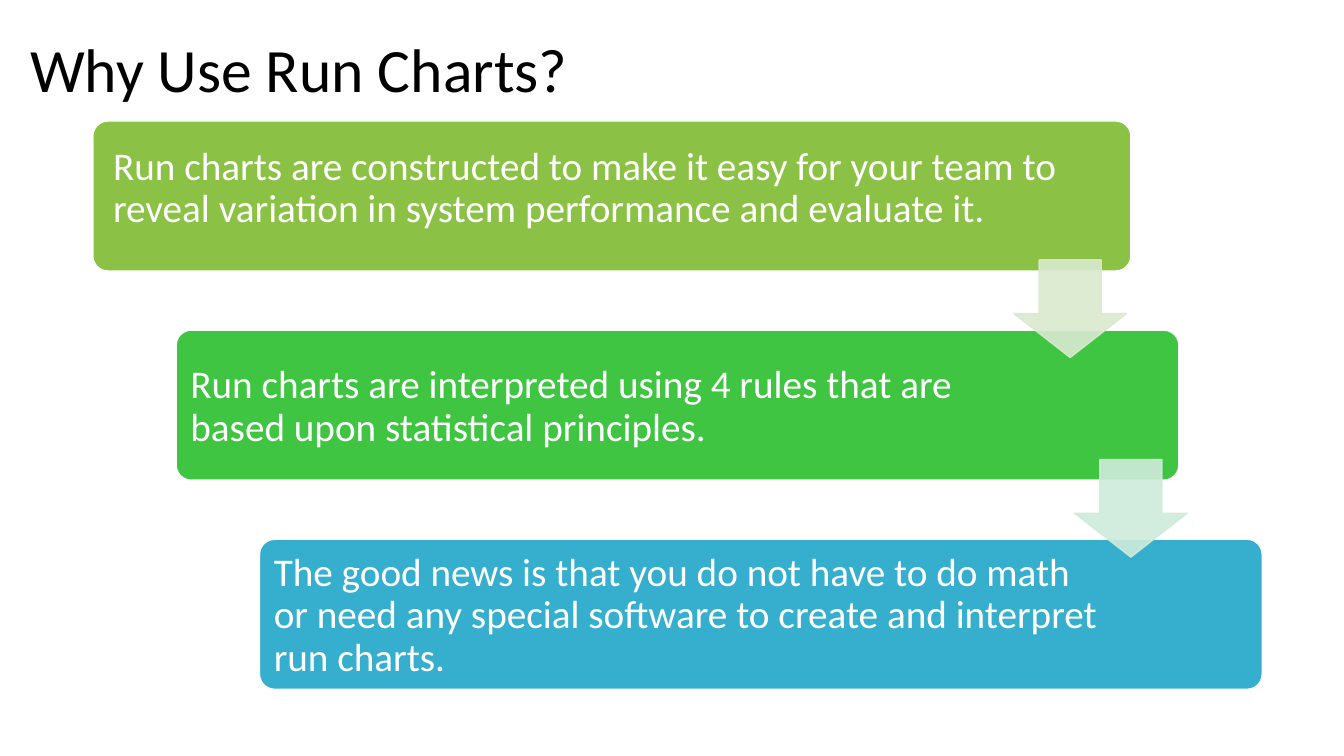
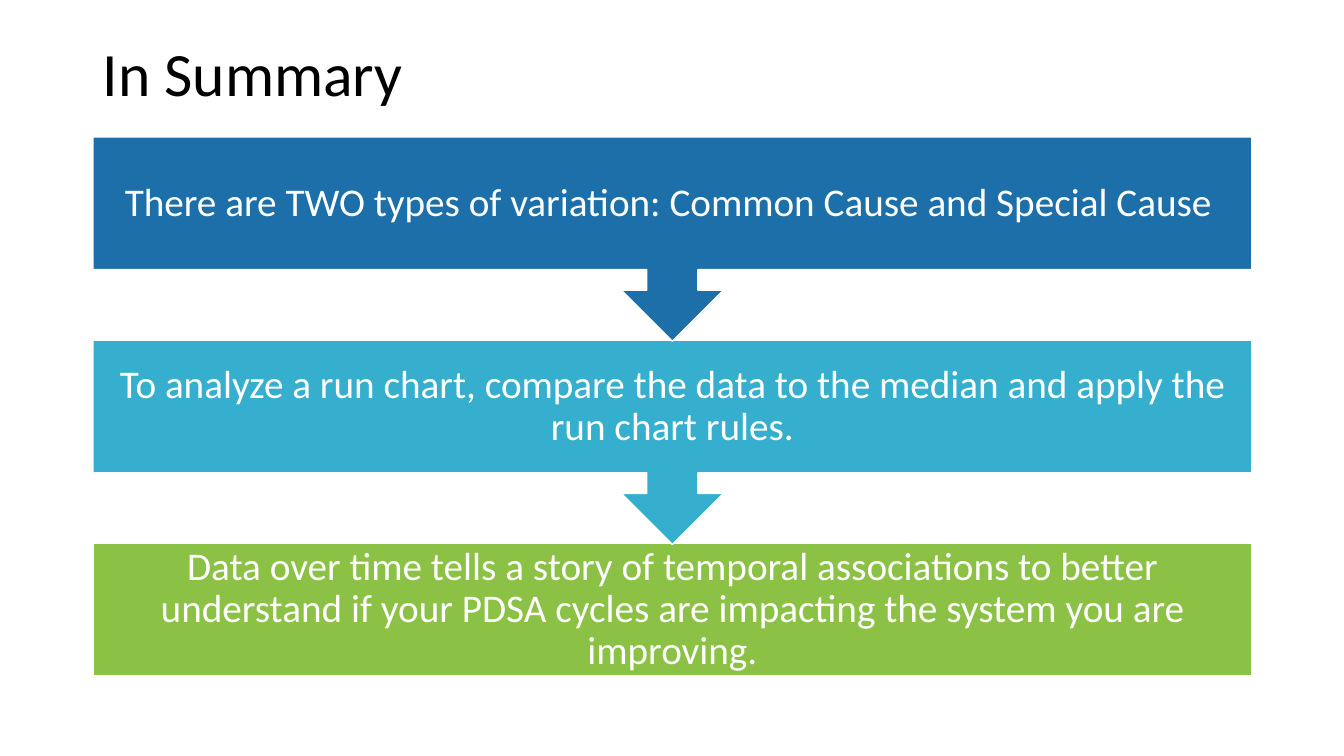
"""Build two slides of stepped message boxes about run charts."""
from dataclasses import dataclass

from lxml import etree
from pptx import Presentation
from pptx.dml.color import RGBColor
from pptx.enum.shapes import MSO_SHAPE
from pptx.enum.text import MSO_ANCHOR, PP_ALIGN
from pptx.oxml.ns import qn
from pptx.util import Cm, Pt


@dataclass(frozen=True)
class Theme:
    font: str = "Calibri"
    head: int = 44
    body: int = 28
    black: str = "000000"
    white: str = "FFFFFF"
    lime: str = "8BC145"
    green: str = "40C543"
    sky: str = "36AFCE"
    blue: str = "1D6FA9"
    sage: str = "DAE9CF"
    mint: str = "CEEBDB"


theme = Theme()


def write(shape, text, size, color, align=PP_ALIGN.LEFT, gap=0, **frame):
    box = shape.text_frame
    for name, value in {"word_wrap": True, "vertical_anchor": MSO_ANCHOR.MIDDLE, **frame}.items():
        setattr(box, name, value)
    para = box.paragraphs[0]
    para.text = text
    for name, value in {"alignment": align, "line_spacing": 0.9, "space_after": Pt(gap)}.items():
        setattr(para, name, value)
    font = para.runs[0].font
    for name, value in {"name": theme.font, "size": Pt(size)}.items():
        setattr(font, name, value)
    font.color.rgb = RGBColor.from_string(color)


def draw(slide, kind, place, fill, line, tune=()):
    shape = slide.shapes.add_shape(kind, *map(Cm, place))
    shape.shadow.inherit = False
    for index, value in enumerate(tune):
        shape.adjustments[index] = value
    shape.fill.solid()
    shape.fill.fore_color.rgb = RGBColor.from_string(fill)
    shape.line.color.rgb = RGBColor.from_string(line)
    shape.line.width = Pt(1)
    return shape


deck = Presentation()
deck.slide_width, deck.slide_height = Cm(33.87), Cm(19.05)

titles = [
    ("Why Use Run Charts?", (0.51, 0, 32.87, 2.79), MSO_ANCHOR.BOTTOM),
    ("In Summary", (2.34, 0.08, 29.21, 3.68), MSO_ANCHOR.MIDDLE),
]
slides = []
for text, place, anchor in titles:
    slide = deck.slides.add_slide(deck.slide_layouts[6])
    title = slide.shapes.add_textbox(*map(Cm, place))
    write(title, text, theme.head, theme.black, gap=6, vertical_anchor=anchor)
    slides.append(slide)
why, recap = slides

left = 2.34
steps = [
    ("Run charts are constructed to make it easy for your team to reveal variation "
     "in system performance and evaluate it.", theme.lime, 26.16, (0.4, 0, 1.41, 0.36)),
    ("Run charts are interpreted using 4 rules that are based upon statistical principles.",
     theme.green, 25.27, (0.25, 0.1, 3.67, 0)),
    ("The good news is that you do not have to do math or need any special software "
     "to create and interpret run charts.", theme.sky, 25.27, (0.25, 0.1, 3.67, 0)),
]
sides = ("margin_left", "margin_top", "margin_right", "margin_bottom")
for row, (text, fill, width, pads) in enumerate(steps):
    place = (left + 2.1 * row, 3.05 + 5.27 * row, width, 3.78)
    step = draw(why, MSO_SHAPE.ROUNDED_RECTANGLE, place, fill, theme.white, (0.1,))
    write(step, text, theme.body, theme.white, **dict(zip(sides, map(Cm, pads))))

for row, tint in enumerate((theme.sage, theme.mint)):
    place = (25.55 + 1.53 * row, 6.55 + 5.03 * row, 2.84, 2.46)
    arrow = draw(why, MSO_SHAPE.DOWN_ARROW, place, tint, tint, (0.55, 0.45))
    for color in arrow.fill._xPr.iter(qn("a:srgbClr")):
        etree.SubElement(color, qn("a:alpha"), val="90000")

points = [
    ("There are TWO types of variation: Common Cause and Special Cause ", theme.blue),
    ("To analyze a run chart, compare the data to the median and apply the run chart rules.",
     theme.sky),
    ("Data over time tells a story of temporal associations to better understand "
     "if your PDSA cycles are impacting the system you are improving.", theme.lime),
]
last = len(points) - 1
for row, (text, fill) in reversed(list(enumerate(points))):
    kind, height = ((MSO_SHAPE.RECTANGLE, 3.35) if row == last
                    else (MSO_SHAPE.DOWN_ARROW_CALLOUT, 5.15))
    point = draw(recap, kind, (left, 3.45 + 5.12 * row, 29.21, height), fill, theme.white)
    write(point, text, theme.body, theme.white, PP_ALIGN.CENTER,
          **dict(zip(sides, map(Cm, (0.56, 0, 0.56, 0)))))

deck.save("out.pptx")
